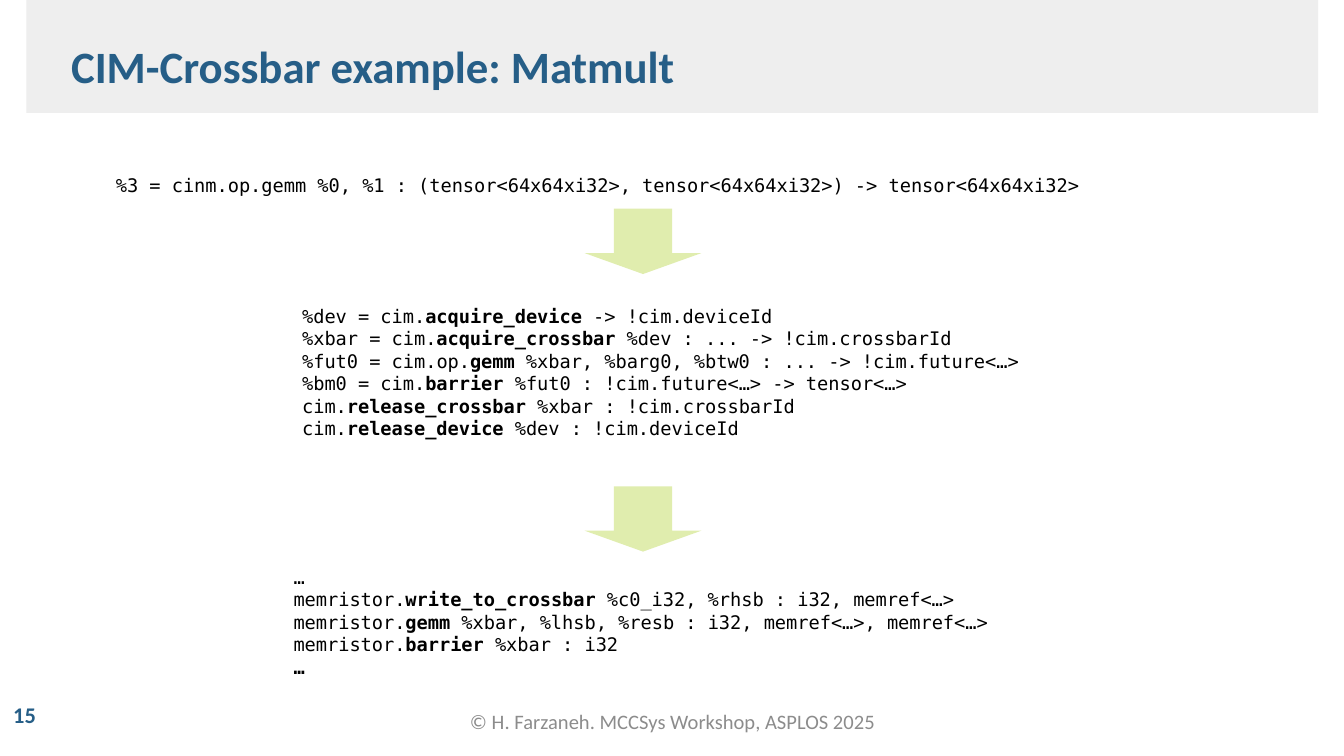
from pptx import Presentation
from pptx.dml.color import RGBColor
from pptx.enum.shapes import MSO_SHAPE
from pptx.enum.text import MSO_ANCHOR, PP_ALIGN
from pptx.util import Pt

RECTANGLE, DOWN_ARROW = MSO_SHAPE.RECTANGLE, MSO_SHAPE.DOWN_ARROW
TOP, MIDDLE = MSO_ANCHOR.TOP, MSO_ANCHOR.MIDDLE
LEFT, CENTER = PP_ALIGN.LEFT, PP_ALIGN.CENTER

TITLE = {"name": "Calibri", "size": Pt(24), "bold": True}
NUMBER = {"name": "Calibri", "size": Pt(12), "bold": True}
FOOTER = {"name": "Calibri", "size": Pt(11), "bold": False}
CODE = {"name": "DejaVu Sans Mono", "size": Pt(10), "bold": False}
CODE_BOLD = {**CODE, "bold": True}
BLUE, GREY, BLACK = "265E87", "8C8C8C", "000000"

# Each code line is (before, operation in bold, after)
GEMM_OP = [
    ("    %3 = cinm.op.gemm %0, %1 : (tensor<64x64xi32>, tensor<64x64xi32>)"
     " -> tensor<64x64xi32>", "", ""),
]
CIM_OPS = [
    ("%dev = cim.", "acquire_device", " -> !cim.deviceId"),
    ("%xbar = cim.", "acquire_crossbar", " %dev : ... -> !cim.crossbarId"),
    ("%fut0 = cim.op.", "gemm",
     " %xbar, %barg0, %btw0 : ... -> !cim.future<…>"),
    ("%bm0 = cim.", "barrier", " %fut0 : !cim.future<…> -> tensor<…>"),
    ("cim.", "release_crossbar", " %xbar : !cim.crossbarId"),
    ("cim.", "release_device", " %dev : !cim.deviceId"),
]
MEMRISTOR_OPS = [
    ("…", "", ""),
    ("memristor.", "write_to_crossbar", " %c0_i32, %rhsb : i32, memref<…>"),
    ("memristor.", "gemm",
     " %xbar, %lhsb, %resb : i32, memref<…>, memref<…>"),
    ("memristor.", "barrier", " %xbar : i32"),
    ("", "…", ""),
]


def color(hex_value):
    return RGBColor.from_string(hex_value)


def add_filled(slide, kind, box, fill):
    shape = slide.shapes.add_shape(kind, *map(Pt, box))
    shape.shadow.inherit = False
    shape.fill.solid()
    shape.fill.fore_color.rgb = color(fill)
    shape.line.fill.background()
    return shape


def add_run(paragraph, text, style, hex_value):
    run = paragraph.add_run()
    run.text = text
    for attribute, value in style.items():
        setattr(run.font, attribute, value)
    run.font.color.rgb = color(hex_value)


def add_frame(slide, box, anchor):
    frame = slide.shapes.add_textbox(*map(Pt, box)).text_frame
    frame.word_wrap = True
    frame.vertical_anchor = anchor
    return frame


def add_label(slide, box, text, style, hex_value, align=LEFT):
    paragraph = add_frame(slide, box, MIDDLE).paragraphs[0]
    paragraph.alignment = align
    add_run(paragraph, text, style, hex_value)


def add_code(slide, box, lines):
    frame = add_frame(slide, box, TOP)
    for index, parts in enumerate(lines):
        paragraph = frame.add_paragraph() if index else frame.paragraphs[0]
        for text, style in zip(parts, (CODE, CODE_BOLD, CODE)):
            if text:
                add_run(paragraph, text, style, BLACK)


def add_lowering_arrow(slide, top):
    arrow = add_filled(slide, DOWN_ARROW, (313.2, top, 62.6, 35), "E0EDAE")
    arrow.adjustments[0] = 0.5
    arrow.adjustments[1] = 0.32


def main():
    prs = Presentation()
    prs.slide_width, prs.slide_height = Pt(720), Pt(405)
    slide = prs.slides.add_slide(prs.slide_layouts[6])

    # Header band and title
    add_filled(slide, RECTANGLE, (14.2, 0, 692, 60.5), "EEEEEE")
    add_label(slide, (31, 15.1, 544, 39.6),
              "CIM-Crossbar example: Matmult", TITLE, BLUE)

    # Page number and footer
    add_label(slide, (0, 371.5, 39.6, 22.3), "15", NUMBER, BLUE)
    add_label(slide, (137.5, 375.4, 445.7, 21.6),
              "© H. Farzaneh. MCCSys Workshop, ASPLOS 2025",
              FOOTER, GREY, CENTER)

    # Code at the three levels, from abstract to device
    add_code(slide, (31, 89.5, 564.5, 20), GEMM_OP)
    add_code(slide, (154.8, 159.8, 419.8, 92), CIM_OPS)
    add_code(slide, (150.2, 299.5, 419.8, 67.7), MEMRISTOR_OPS)

    # Arrows between the levels
    for top in (111.8, 260.5):
        add_lowering_arrow(slide, top)

    prs.save("out.pptx")


if __name__ == "__main__":
    main()
